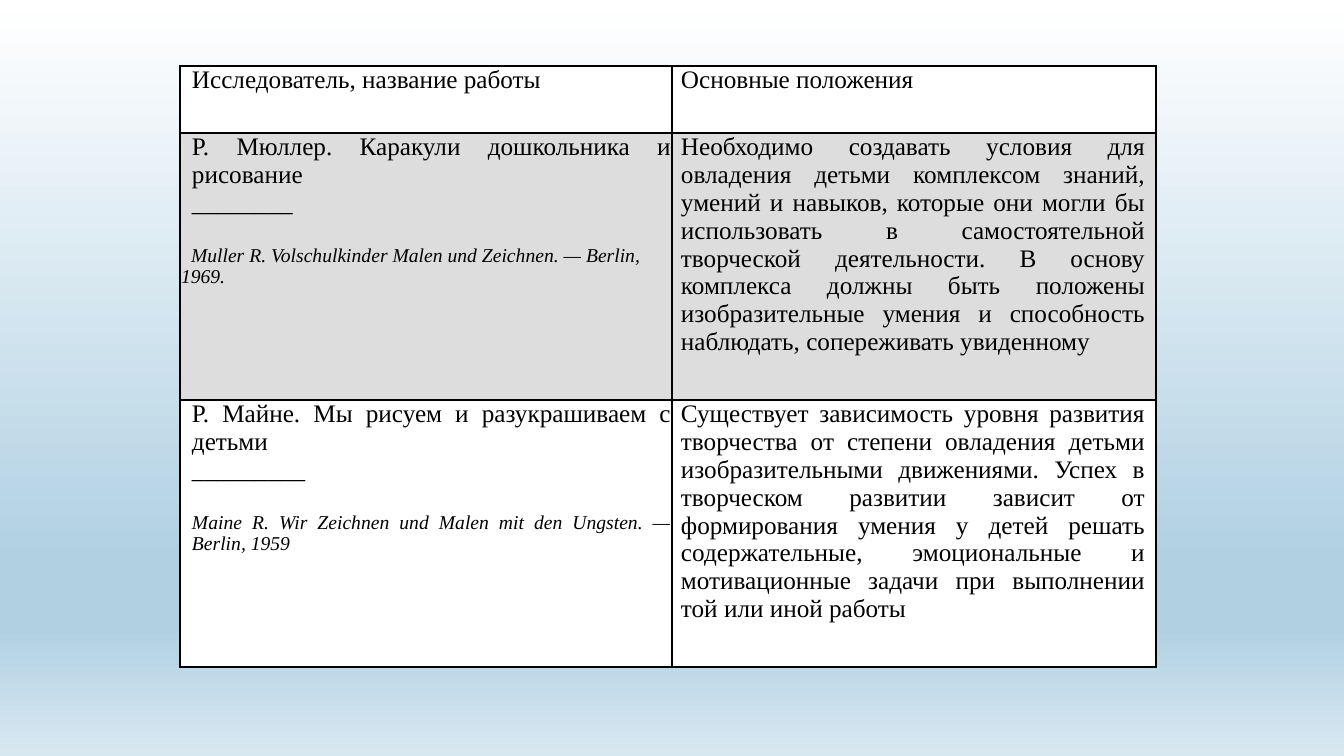
import pptx
import pptx.dml.color
import pptx.enum.text
import pptx.oxml
import pptx.oxml.ns
import pptx.util
from lxml import etree

PX = 914400 / 100.8
THEME = {
    "font": "Times New Roman",
    "ink": "000000",
    "white": "FFFFFF",
    "grey": "DDDDDD",
    "body": 18,
    "citation": 14,
    "citation_gap": 20,
    "sky": [(0, "FFFFFF"), (74, "B1D1E3"), (83, "B1D1E3"), (100, "D8E8F1")],
}
JUSTIFY = pptx.enum.text.PP_ALIGN.JUSTIFY
LEFT = pptx.enum.text.PP_ALIGN.LEFT


def px(length):
    return pptx.util.Emu(round(length * PX))


def add_border(cell):
    """Draw a 1 pt line on all four sides; call before setting the cell's fill."""
    for side in ("lnL", "lnR", "lnT", "lnB"):
        cell._tc.get_or_add_tcPr().append(pptx.oxml.parse_xml(
            f'<a:{side} {pptx.oxml.ns.nsdecls("a")} w="12700"><a:solidFill>'
            f'<a:srgbClr val="{THEME["ink"]}"/></a:solidFill></a:{side}>'))


# Each paragraph: text, size, italic, alignment, left indent, first-line indent
def body(text, indent, italic=False):
    return text, "body", italic, JUSTIFY, indent, 0


WORK, IDEA = 11, 8
ROWS = [
    (67, "white",
     [body("Исследователь, название работы", WORK)],
     [body("Основные положения", IDEA)]),
    (267, "grey",
     [body("Р. Мюллер. Каракули дошкольника и рисование", WORK),
      body("________", WORK),
      ("Muller R. Volschulkinder Malen und Zeichnen. — Berlin, 1969.",
       "citation", True, LEFT, 0, 10)],
     [body("Необходимо создавать условия для овладения детьми комплексом знаний, "
           "умений и навыков, которые они могли бы использовать в самостоятельной "
           "творческой деятельности. В основу комплекса должны быть положены "
           "изобразительные умения и способность наблюдать, сопереживать увиденному", IDEA)]),
    (267, "white",
     [body("Р. Майне. Мы рисуем и разукрашиваем с детьми", WORK),
      body("_________", WORK, italic=True),
      ("Maine R. Wir Zeichnen und Malen mit den Ungsten. — Berlin, 1959",
       "citation", True, JUSTIFY, WORK, 0)],
     [body("Существует зависимость уровня развития творчества от степени овладения "
           "детьми изобразительными движениями. Успех в творческом развитии зависит "
           "от формирования умения у детей решать содержательные, эмоциональные и "
           "мотивационные задачи при выполнении той или иной работы", IDEA)]),
]
COLUMN_WIDTHS = (492, 484)
RIGHT_MARGINS = (1, 11)

presentation = pptx.Presentation()
presentation.slide_width, presentation.slide_height = px(1344), px(756)
slide = presentation.slides.add_slide(presentation.slide_layouts[6])

# Background sky
sky = slide.background.fill
sky.gradient()
sky.gradient_angle = 270
stops = slide.element.find(".//" + pptx.oxml.ns.qn("a:gsLst"))
for stop in list(stops):
    stops.remove(stop)
for percent, colour in THEME["sky"]:
    stop = etree.SubElement(stops, pptx.oxml.ns.qn("a:gs"), pos=str(percent * 1000))
    etree.SubElement(stop, pptx.oxml.ns.qn("a:srgbClr"), val=colour)

# Table of researchers and their main ideas
researchers = slide.shapes.add_table(
    len(ROWS), len(COLUMN_WIDTHS), px(180), px(66),
    px(sum(COLUMN_WIDTHS)), px(sum(row[0] for row in ROWS))).table
researchers.first_row = False
researchers.horz_banding = False
for column, width in zip(researchers.columns, COLUMN_WIDTHS):
    column.width = px(width)

for row, (height, shade, *contents) in zip(researchers.rows, ROWS):
    row.height = px(height)
    for cell, paragraphs, right_margin in zip(row.cells, contents, RIGHT_MARGINS):
        add_border(cell)
        cell.fill.solid()
        cell.fill.fore_color.rgb = pptx.dml.color.RGBColor.from_string(THEME[shade])
        cell.margin_left, cell.margin_right = px(1), px(right_margin)
        cell.margin_top = cell.margin_bottom = 0
        for index, (text, role, italic, alignment, left, first) in enumerate(paragraphs):
            frame = cell.text_frame
            paragraph = frame.add_paragraph() if index else frame.paragraphs[0]
            paragraph.text = text
            paragraph.alignment = alignment
            if role == "citation":
                paragraph.space_before = pptx.util.Pt(THEME["citation_gap"])
            paragraph.font.name = THEME["font"]
            paragraph.font.size = pptx.util.Pt(THEME[role])
            paragraph.font.italic = italic
            paragraph.font.color.rgb = pptx.dml.color.RGBColor.from_string(THEME["ink"])
            properties = paragraph._p.get_or_add_pPr()
            properties.set("marL", str(px(left)))
            properties.set("indent", str(px(first)))

presentation.save("out.pptx")
